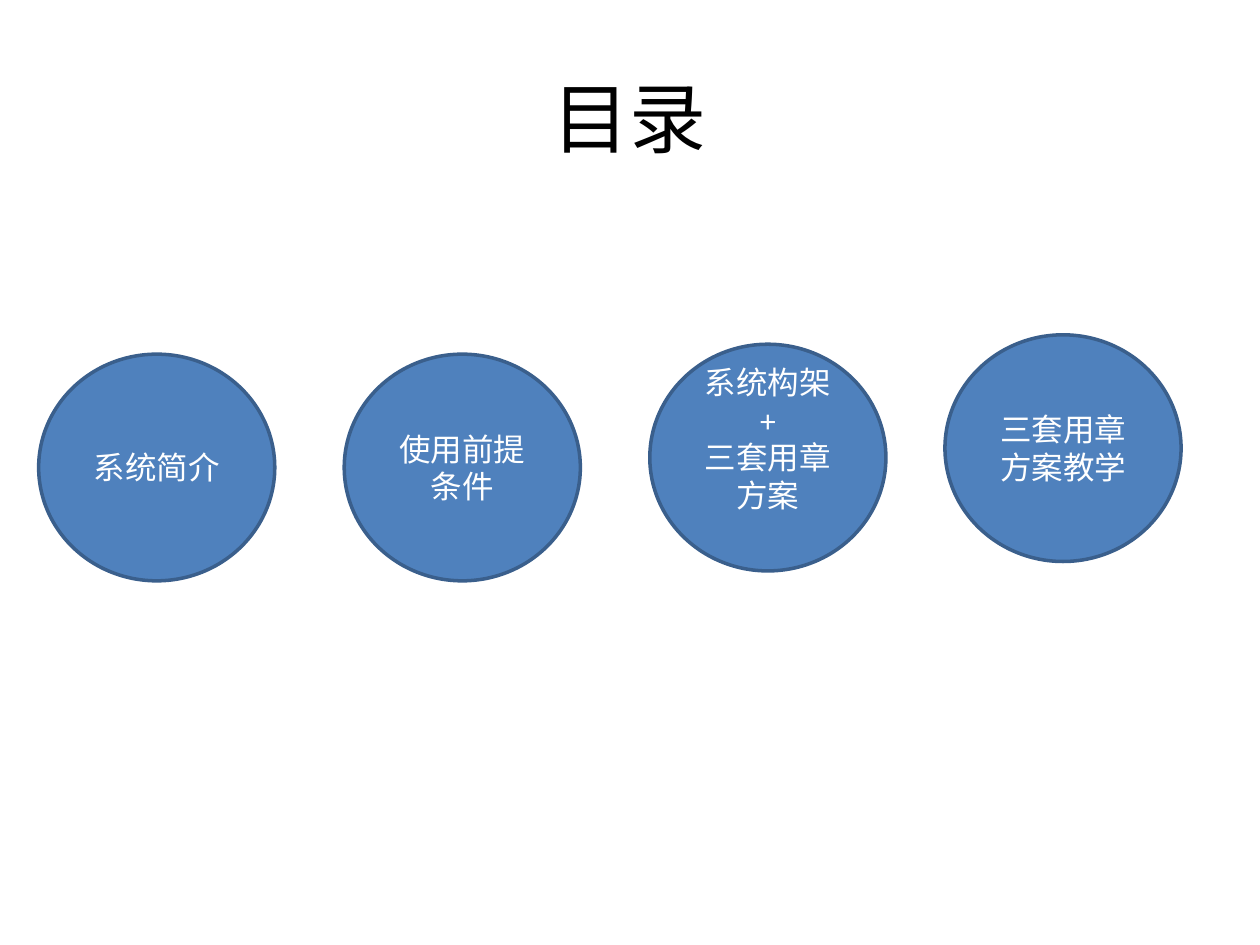
import pptx
import pptx.dml.color
import pptx.enum.shapes
import pptx.enum.text
import pptx.util
from pptx.util import Cm

BLACK = pptx.dml.color.RGBColor(0x00, 0x00, 0x00)
WHITE = pptx.dml.color.RGBColor(0xFF, 0xFF, 0xFF)
BLUE = pptx.dml.color.RGBColor(0x4F, 0x81, 0xBD)
DARK_BLUE = pptx.dml.color.RGBColor(0x3A, 0x5F, 0x8C)


class ContentsPage:
    font_name = "Calibri"
    title_size = 44
    topic_size = 18
    topic_width = Cm(4.76)
    topic_height = Cm(4.57)

    def __init__(self, deck):
        self.page = deck.slides.add_slide(deck.slide_layouts[6])

    def set_text(self, shape, lines, size, color):
        frame = shape.text_frame
        frame.word_wrap = True
        frame.vertical_anchor = pptx.enum.text.MSO_ANCHOR.MIDDLE
        frame.text = "\n".join(lines)
        for paragraph in frame.paragraphs:
            paragraph.alignment = pptx.enum.text.PP_ALIGN.CENTER
            paragraph.font.name = self.font_name
            paragraph.font.size = pptx.util.Pt(size)
            paragraph.font.color.rgb = color

    def title(self, text):
        box = self.page.shapes.add_textbox(Cm(1.27), Cm(0.76), Cm(22.86), Cm(3.18))
        self.set_text(box, [text], self.title_size, BLACK)

    def topic(self, left, top, lines, bottom_margin=Cm(0.13)):
        circle = self.page.shapes.add_shape(
            pptx.enum.shapes.MSO_SHAPE.OVAL,
            left, top, self.topic_width, self.topic_height)
        circle.shadow.inherit = False
        circle.fill.solid()
        circle.fill.fore_color.rgb = BLUE
        circle.line.color.rgb = DARK_BLUE
        circle.line.width = pptx.util.Pt(2)
        self.set_text(circle, lines, self.topic_size, WHITE)
        circle.text_frame.margin_bottom = bottom_margin


def main():
    deck = pptx.Presentation()
    deck.slide_width = Cm(25.4)
    deck.slide_height = Cm(19.05)
    contents = ContentsPage(deck)

    # Heading
    contents.title("目录")

    # Topics from left to right; the third text sits higher in its circle
    contents.topic(Cm(0.78), Cm(7.14), ["系统简介"])
    contents.topic(Cm(6.94), Cm(7.14), ["使用前提条件"])
    contents.topic(Cm(13.1), Cm(6.94), ["系统构架", "+", "三套用章方案"],
                   bottom_margin=Cm(0.9))
    contents.topic(Cm(19.05), Cm(6.75), ["三套用章方案教学"])

    deck.save("out.pptx")


if __name__ == "__main__":
    main()
